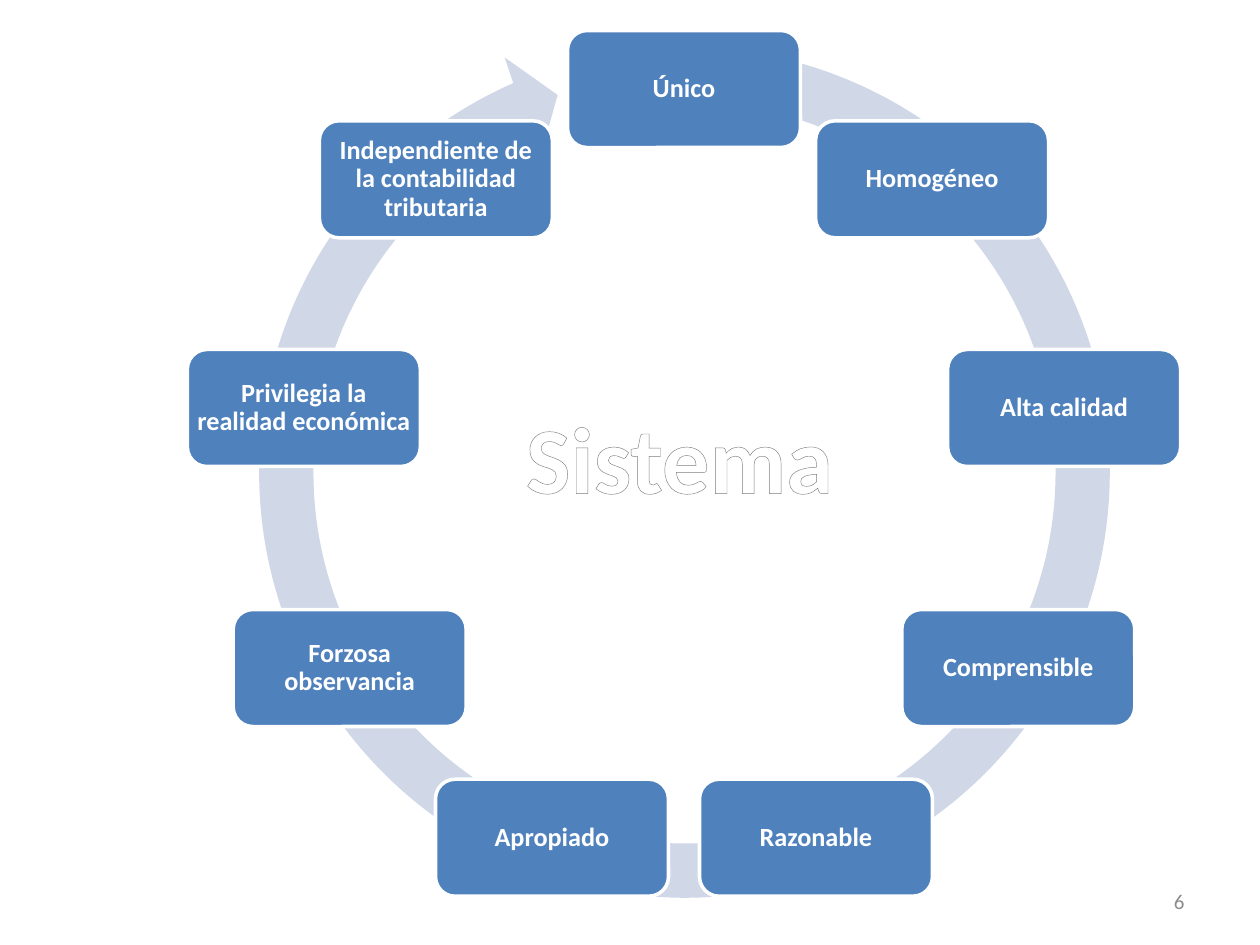
import math
from dataclasses import dataclass

from lxml import etree
from pptx import Presentation
from pptx import util as u
from pptx.dml.color import RGBColor
from pptx.enum import shapes, text
from pptx.oxml.ns import nsdecls

QUALITIES = [
    "Único", "Homogéneo", "Alta calidad", "Comprensible", "Razonable",
    "Apropiado", "Forzosa observancia", "Privilegia la realidad económica",
    "Independiente de la contabilidad tributaria",
]
CENTRE_WORD = "Sistema"
SLIDE_NUMBER = "6"

PX = 914400 // 126
SLIDE_SIZE = (1260, 945)
CENTRE = (684, 475)
RADIUS = 386
BOX = (233, 117)
BOX_INSET = 2
RING = (232, 20, 905, 905)
RING_ADJUSTMENTS = (0.06, 3.31, 147.55, 168.14, 0.06)
WORD_AREA = (512, 393, 335, 127)
NUMBER_AREA = (903, 876, 294, 50)


@dataclass(frozen=True)
class Theme:
    font: str = "Calibri"
    box: str = "4F81BD"
    ring: str = "D0D8E8"
    white: str = "FFFFFF"
    number: str = "8C8C8C"
    word_outline: str = "7D7D7D"
    word_stops: tuple = ((0, "FFFFFF"), (9, "FFFFFF"), (50, "7F7F7F"),
                         (79, "FFFFFF"), (100, "FFFFFF"))
    box_size: int = 15
    word_size: int = 54
    number_size: int = 12
    box_line: int = 2
    word_line: float = 0.83


THEME = Theme()


def emu(lengths):
    return [round(length * PX) for length in lengths]


def add_filled_shape(container, kind, area, color):
    shape = container.add_shape(kind, *emu(area))
    shape.shadow.inherit = False
    shape.fill.solid()
    shape.fill.fore_color.rgb = RGBColor.from_string(color)
    shape.line.fill.background()
    return shape


def write(frame, words, size, align, color=None, bold=False):
    paragraph = frame.paragraphs[0]
    paragraph.alignment = align
    run = paragraph.add_run()
    run.text = words
    run.font.name = THEME.font
    run.font.size = u.Pt(size)
    run.font.bold = bold
    if color:
        run.font.color.rgb = RGBColor.from_string(color)
    return paragraph


def add_quality(container, words, index):
    """Place a box on the circle, clockwise from the top."""
    angle = 2 * math.pi * index / len(QUALITIES)
    left = CENTRE[0] + RADIUS * math.sin(angle) - BOX[0] / 2
    top = CENTRE[1] - RADIUS * math.cos(angle) - BOX[1] / 2
    shape = add_filled_shape(container, shapes.MSO_SHAPE.ROUNDED_RECTANGLE,
                             (left, top, *BOX), THEME.box)
    shape.line.color.rgb = RGBColor.from_string(THEME.white)
    shape.line.width = u.Pt(THEME.box_line)
    frame = shape.text_frame
    frame.word_wrap = True
    frame.vertical_anchor = text.MSO_ANCHOR.MIDDLE
    frame.margin_left = frame.margin_right = BOX_INSET * PX
    frame.margin_top = frame.margin_bottom = BOX_INSET * PX
    paragraph = write(frame, words, THEME.box_size, text.PP_ALIGN.CENTER,
                      THEME.white, bold=True)
    paragraph.line_spacing = 0.9


def outline_with_gradient(run):
    stops = "".join(
        f'<a:gs pos="{position * 1000}"><a:srgbClr val="{color}"/></a:gs>'
        for position, color in THEME.word_stops)
    line = (f'<a:ln {nsdecls("a")} w="{u.Pt(THEME.word_line)}"><a:solidFill>'
            f'<a:srgbClr val="{THEME.word_outline}"/></a:solidFill></a:ln>')
    fill = (f'<a:gradFill {nsdecls("a")}><a:gsLst>{stops}</a:gsLst>'
            '<a:lin ang="5400000" scaled="0"/></a:gradFill>')
    properties = run.font._element
    for index, xml in enumerate((line, fill)):
        properties.insert(index, etree.fromstring(xml))


def main():
    presentation = Presentation()
    presentation.slide_width, presentation.slide_height = emu(SLIDE_SIZE)
    slide = presentation.slides.add_slide(presentation.slide_layouts[6])

    cycle = slide.shapes.add_group_shape().shapes
    ring = add_filled_shape(cycle, shapes.MSO_SHAPE.CIRCULAR_ARROW, RING, THEME.ring)
    for index, value in enumerate(RING_ADJUSTMENTS):
        ring.adjustments[index] = value
    for index, words in enumerate(QUALITIES):
        add_quality(cycle, words, index)

    word_frame = slide.shapes.add_textbox(*emu(WORD_AREA)).text_frame
    word_frame.word_wrap = False
    word_frame.auto_size = text.MSO_AUTO_SIZE.SHAPE_TO_FIT_TEXT
    word = write(word_frame, CENTRE_WORD, THEME.word_size,
                 text.PP_ALIGN.CENTER, bold=True)
    outline_with_gradient(word.runs[0])

    number_frame = slide.shapes.add_textbox(*emu(NUMBER_AREA)).text_frame
    number_frame.word_wrap = True
    number_frame.vertical_anchor = text.MSO_ANCHOR.MIDDLE
    write(number_frame, SLIDE_NUMBER, THEME.number_size,
          text.PP_ALIGN.RIGHT, THEME.number)

    presentation.save("out.pptx")


if __name__ == "__main__":
    main()
